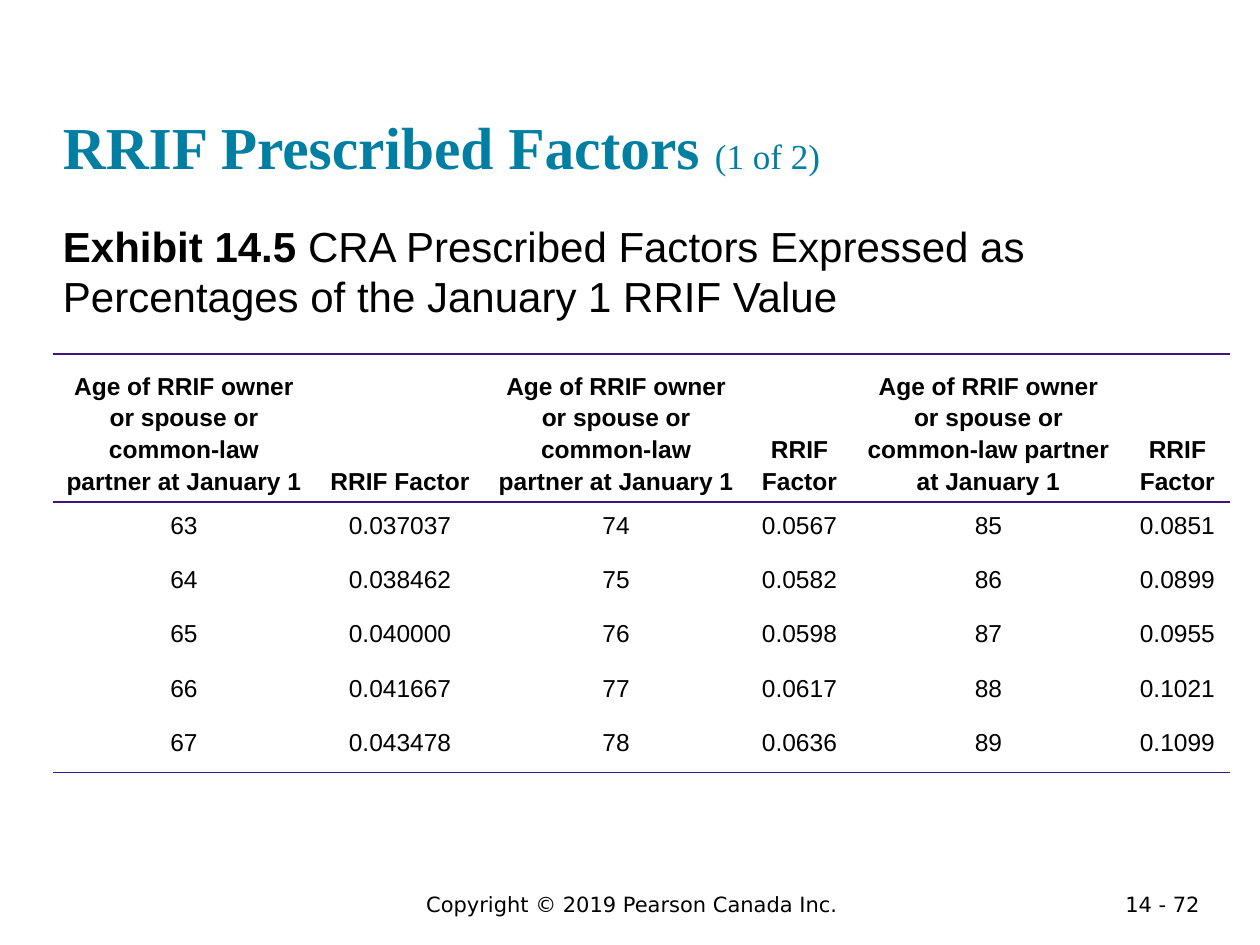
from dataclasses import dataclass

from lxml import etree
from pptx import Presentation
from pptx import util as u
from pptx.dml.color import RGBColor
from pptx.enum import text
from pptx.oxml.ns import qn


@dataclass(frozen=True)
class Theme:
    title_color: str = "007FA3"
    ink: str = "000000"
    rule: str = "3C1581"
    title_font: str = "Times New Roman"
    body_font: str = "Arial"
    footer_font: str = "DejaVu Sans"
    title_size: int = 34
    count_size: int = 20
    body_size: int = 24
    table_size: int = 14
    footer_size: int = 12
    rule_width: int = 1


THEME = Theme()
NO_STYLE = "{2D5ABB26-0587-4C30-8999-92F81FD0307C}"
ALIGN = text.PP_ALIGN
ANCHOR = text.MSO_ANCHOR

AGE_HEADING = "Age of RRIF owner or spouse or common-law partner at January 1"
COLUMN_WIDTHS = (2.08, 1.35, 2.08, 0.83, 2.17, 0.83)
HEADER_HEIGHT = 1.1
ROW_HEIGHT = 0.43
FIRST_AGES = (63, 74, 85)
FACTORS = (
    ("0.037037", "0.0567", "0.0851"),
    ("0.038462", "0.0582", "0.0899"),
    ("0.040000", "0.0598", "0.0955"),
    ("0.041667", "0.0617", "0.1021"),
    ("0.043478", "0.0636", "0.1099"),
)


def add_run(p, content, *, font, size, color=THEME.ink, bold=False):
    r = p.add_run()
    r.text = content
    r.font.name = font
    r.font.size = u.Pt(size)
    r.font.bold = bold
    r.font.color.rgb = RGBColor.from_string(color)


def add_box(s, left, top, width, height, *, align=ALIGN.LEFT, anchor=ANCHOR.TOP, inset=True):
    sp = s.shapes.add_textbox(*map(u.Inches, (left, top, width, height)))
    tf = sp.text_frame
    tf.word_wrap = True
    tf.vertical_anchor = anchor
    if not inset:
        tf.margin_left = tf.margin_right = tf.margin_top = tf.margin_bottom = 0
    p = tf.paragraphs[0]
    p.alignment = align
    return p


def add_rule(cell, side):
    ln = etree.SubElement(cell._tc.get_or_add_tcPr(), qn(f"a:ln{side}"), w=str(u.Pt(THEME.rule_width)))
    fill = etree.SubElement(ln, qn("a:solidFill"))
    etree.SubElement(fill, qn("a:srgbClr"), val=THEME.rule)


def fill_cell(cell, content, *, bold=False, anchor=ANCHOR.TOP, rules=""):
    for side in rules:
        add_rule(cell, side)
    cell.fill.background()
    cell.vertical_anchor = anchor
    p = cell.text_frame.paragraphs[0]
    p.alignment = ALIGN.CENTER
    p.line_spacing = 1.15
    add_run(p, content, font=THEME.body_font, size=THEME.table_size, bold=bold)


def add_factor_table(s, left, top):
    rows = len(FACTORS) + 1
    height = HEADER_HEIGHT + ROW_HEIGHT * len(FACTORS)
    frame = s.shapes.add_table(rows, len(COLUMN_WIDTHS), u.Inches(left), u.Inches(top),
                               u.Inches(sum(COLUMN_WIDTHS)), u.Inches(height))
    table = frame.table
    table.first_row = table.horz_banding = False
    table._tbl.tblPr.find(qn("a:tableStyleId")).text = NO_STYLE
    for column, width in zip(table.columns, COLUMN_WIDTHS):
        column.width = u.Inches(width)
    for i, row in enumerate(table.rows):
        row.height = u.Inches(ROW_HEIGHT if i else HEADER_HEIGHT)

    for j, heading in enumerate((AGE_HEADING, "RRIF Factor") * len(FIRST_AGES)):
        fill_cell(table.cell(0, j), heading, bold=True, anchor=ANCHOR.BOTTOM, rules="TB")
    for i, factors in enumerate(FACTORS):
        rules = "B" if i == len(FACTORS) - 1 else ""
        for j, (age, factor) in enumerate(zip(FIRST_AGES, factors)):
            fill_cell(table.cell(i + 1, 2 * j), str(age + i), rules=rules)
            fill_cell(table.cell(i + 1, 2 * j + 1), factor, rules=rules)


def add_title(s):
    p = add_box(s, 0.5, 0.24, 9, 1.2, anchor=ANCHOR.BOTTOM, inset=False)
    style = dict(font=THEME.title_font, color=THEME.title_color)
    add_run(p, "RRIF Prescribed Factors ", size=THEME.title_size, bold=True, **style)
    add_run(p, "(1 of 2)", size=THEME.count_size, **style)


def add_caption(s):
    p = add_box(s, 0.5, 1.75, 9, 0.83, inset=False)
    style = dict(font=THEME.body_font, size=THEME.body_size)
    add_run(p, "Exhibit 14.5 ", bold=True, **style)
    add_run(p, "CRA Prescribed Factors Expressed as Percentages of the January 1 RRIF Value", **style)


def add_footer(s):
    style = dict(font=THEME.footer_font, size=THEME.footer_size)
    p = add_box(s, 1.64, 7.03, 6.75, 0.3, align=ALIGN.CENTER)
    add_run(p, "Copyright © 2019 Pearson Canada Inc.", **style)
    p = add_box(s, 8.62, 7.03, 1, 0.22, align=ALIGN.RIGHT)
    add_run(p, "14 - 72", **style)


def main():
    prs = Presentation()
    prs.slide_width, prs.slide_height = u.Inches(10), u.Inches(7.5)
    s = prs.slides.add_slide(prs.slide_layouts[6])
    add_footer(s)
    add_title(s)
    add_caption(s)
    add_factor_table(s, 0.42, 2.81)
    prs.save("out.pptx")


if __name__ == "__main__":
    main()
